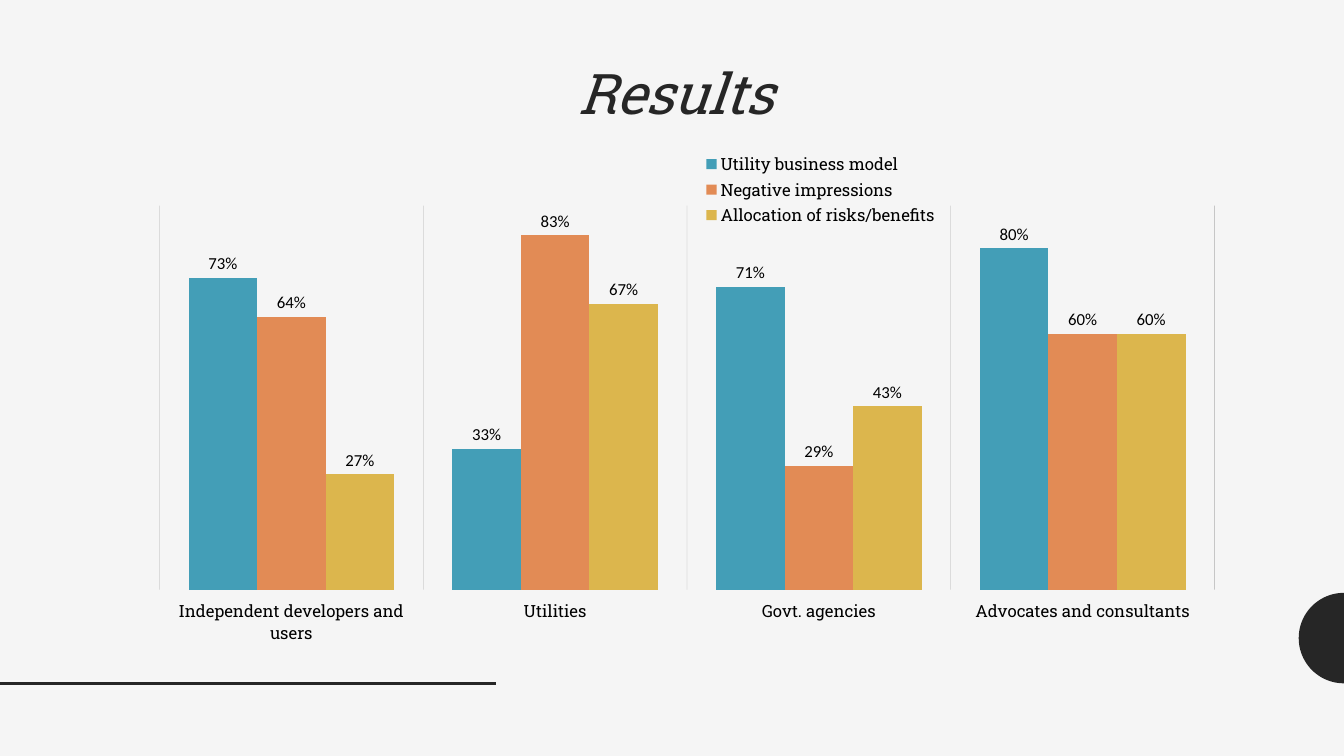
import math
from lxml import etree
from pptx import Presentation
from pptx.chart.data import CategoryChartData
from pptx.dml.color import RGBColor
from pptx.enum.chart import (XL_CHART_TYPE, XL_LABEL_POSITION,
                             XL_LEGEND_POSITION, XL_TICK_LABEL_POSITION,
                             XL_TICK_MARK)
from pptx.enum.text import MSO_ANCHOR, PP_ALIGN
from pptx.oxml import parse_xml
from pptx.oxml.ns import nsdecls, qn
from pptx.util import Cm, Pt

COLUMNS = XL_CHART_TYPE.COLUMN_CLUSTERED
OUTSIDE = XL_LABEL_POSITION.OUTSIDE_END
LEFT = XL_LEGEND_POSITION.LEFT
LOW = XL_TICK_LABEL_POSITION.LOW
NO_TICK = XL_TICK_MARK.NONE
TOP = MSO_ANCHOR.TOP
CENTER = PP_ALIGN.CENTER

COLORS = {"background": "F5F5F5", "dark": "262626", "grid": "666666",
          "text": "000000"}
SLAB, SANS = "Roboto Slab", "Calibri"
SLIDE_W, SLIDE_H = 33.87, 19.05

CATEGORIES = ["Independent developers and users", "Utilities",
              "Govt. agencies", "Advocates and consultants"]
SERIES = [
    ("Utility business model", "439EB7", (0.73, 0.33, 0.71, 0.8)),
    ("Negative impressions", "E28B55", (0.64, 0.83, 0.29, 0.6)),
    ("Allocation of risks/benefits", "DCB64D", (0.27, 0.67, 0.43, 0.6)),
]


def rgb(name):
    return RGBColor.from_string(COLORS[name])


def set_font(font, name, size, color):
    font.name, font.size = name, Pt(size)
    font.color.rgb = rgb(color)


def set_layout(parent, index, x, y, w, h, inner=False):
    """Place a chart part by fractions of the chart's box."""
    old = parent.find(qn("c:layout"))
    if old is not None:
        parent.remove(old)
    target = '<c:layoutTarget val="inner"/>' if inner else ""
    parent.insert(index, parse_xml(
        f'<c:layout {nsdecls("c")}><c:manualLayout>{target}'
        '<c:xMode val="edge"/><c:yMode val="edge"/>'
        f'<c:x val="{x}"/><c:y val="{y}"/><c:w val="{w}"/><c:h val="{h}"/>'
        '</c:manualLayout></c:layout>'))


def add_half_disc(s, x, y, radius):
    """Draw the left half of a disc, its flat side at x and middle at y."""
    steps = 48
    points = [(Cm(x - radius * math.sin(math.pi * i / steps)),
               Cm(y - radius * math.cos(math.pi * i / steps)))
              for i in range(steps + 1)]
    builder = s.shapes.build_freeform(*points[0])
    builder.add_line_segments(points[1:], close=True)
    sp = builder.convert_to_shape()
    sp.shadow.inherit = False
    sp.fill.solid()
    sp.fill.fore_color.rgb = rgb("dark")
    sp.line.fill.background()


def add_rule(s, x, y, w):
    line = s.shapes.add_connector(1, Cm(x), Cm(y), Cm(x + w), Cm(y))
    line.line.color.rgb = rgb("dark")
    line.line.width = Pt(2)
    etree.SubElement(line._element.spPr, qn("a:effectLst"))


def format_title(s, text, x, y, w, h):
    title = s.shapes.title
    title.left, title.top, title.width, title.height = map(Cm, (x, y, w, h))
    tf = title.text_frame
    tf.text = text
    tf.vertical_anchor = TOP
    p = tf.paragraphs[0]
    p.alignment = CENTER
    p.line_spacing = 0.9
    set_font(p.font, SLAB, 40, "dark")
    p.font.italic = True


def format_axes(chart):
    axis = chart.category_axis
    axis.major_tick_mark = axis.minor_tick_mark = NO_TICK
    axis.tick_label_position = LOW
    set_font(axis.tick_labels.font, SLAB, 12, "text")
    axis.format.line.fill.background()
    axis.has_major_gridlines = True
    grid = axis.major_gridlines.format.line
    grid.width = Pt(0.25)
    grid.color.rgb = rgb("grid")
    color = axis.major_gridlines._xAx.find(
        f'{qn("c:majorGridlines")}//{qn("a:srgbClr")}')
    etree.SubElement(color, qn("a:alpha")).set("val", "50000")

    values = chart.value_axis
    values.minimum_scale, values.maximum_scale = 0, 0.9
    values.has_major_gridlines = False
    values.visible = False


def add_results_chart(s, x, y, w, h):
    data = CategoryChartData(number_format="0%")
    data.categories = CATEGORIES
    for name, _, shares in SERIES:
        data.add_series(name, shares)
    chart = s.shapes.add_chart(COLUMNS, Cm(x), Cm(y), Cm(w), Cm(h), data).chart
    set_font(chart.font, SANS, 12, "text")
    chart.has_title = False
    format_axes(chart)

    plot = chart.plots[0]
    plot.gap_width, plot.overlap = 85, 0
    plot.vary_by_categories = False
    for series, (_, color, _) in zip(plot.series, SERIES):
        series.format.fill.solid()
        series.format.fill.fore_color.rgb = RGBColor.from_string(color)
        labels = series.data_labels
        labels.show_value = True
        labels.number_format, labels.number_format_is_linked = "0%", False
        labels.position = OUTSIDE
        set_font(labels.font, SANS, 12, "text")

    chart.has_legend = True
    legend = chart.legend
    legend.position = LEFT
    legend.include_in_layout = True
    set_font(legend.font, SLAB, 12, "text")
    set_layout(legend._element, 1, 0.54, 0.02, 0.21, 0.15)
    plot_area = chart._chartSpace.chart.plotArea
    set_layout(plot_area, 0, 0.066, 0.125, 0.924, 0.719, inner=True)


def build_results_slide(prs):
    s = prs.slides.add_slide(prs.slide_layouts[5])
    s.background.fill.solid()
    s.background.fill.fore_color.rgb = rgb("background")
    add_half_disc(s, SLIDE_W, 16.08, 1.14)
    add_rule(s, 0, 17.22, 12.5)
    add_results_chart(s, 2.12, 3.5, 28.78, 13.46)
    format_title(s, "Results", 2.12, 1.55, 29.82, 3)


def main():
    prs = Presentation()
    prs.slide_width, prs.slide_height = Cm(SLIDE_W), Cm(SLIDE_H)
    build_results_slide(prs)
    prs.save("out.pptx")


if __name__ == "__main__":
    main()
